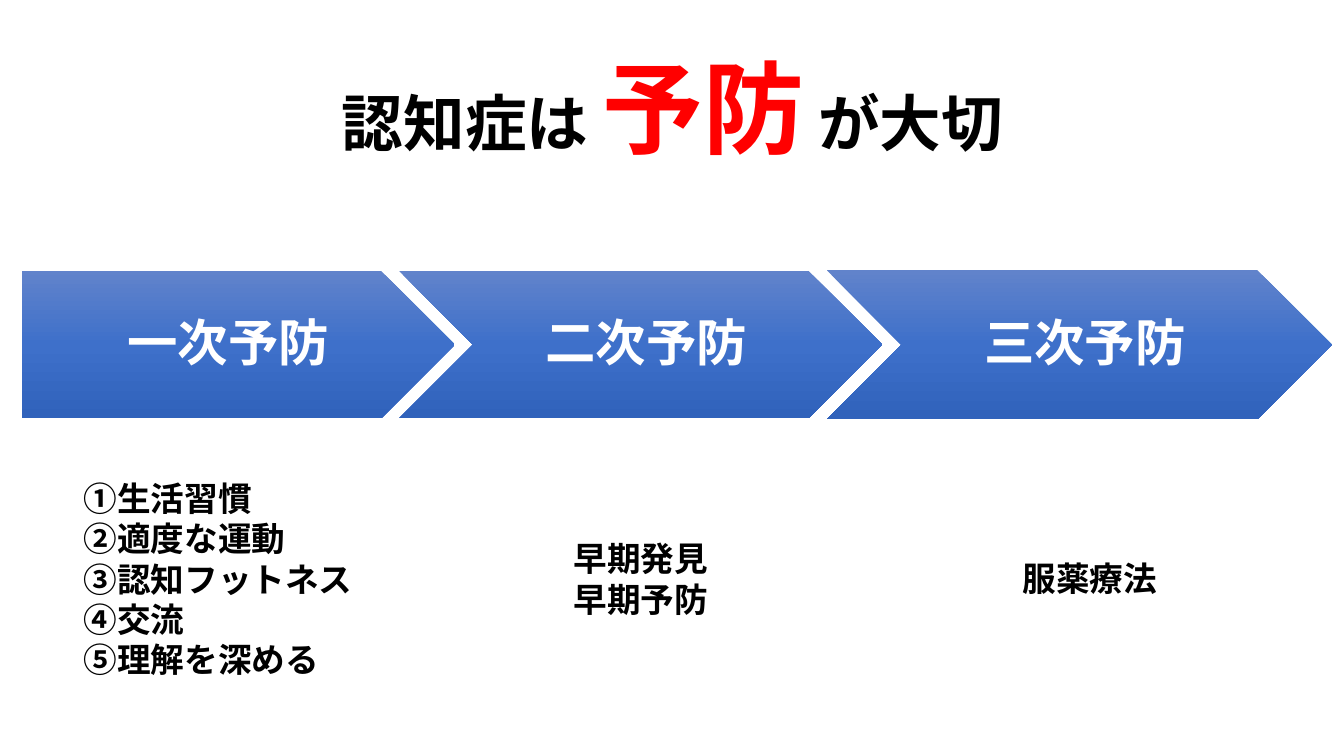
"""Build a slide on the three stages of dementia prevention."""
from copy import deepcopy
from dataclasses import dataclass

from lxml import etree
from pptx import Presentation
from pptx.dml.color import RGBColor
from pptx.enum.lang import MSO_LANGUAGE_ID
from pptx.enum.shapes import MSO_SHAPE
from pptx.enum.text import MSO_ANCHOR, MSO_AUTO_SIZE, PP_ALIGN
from pptx.oxml.ns import qn
from pptx.util import Inches, Pt

PENTAGON = MSO_SHAPE.PENTAGON
CHEVRON = MSO_SHAPE.CHEVRON
MIDDLE = MSO_ANCHOR.MIDDLE
TOP = MSO_ANCHOR.TOP
NO_AUTOFIT = MSO_AUTO_SIZE.NONE
GROW = MSO_AUTO_SIZE.SHAPE_TO_FIT_TEXT
CENTER = PP_ALIGN.CENTER
LEFT = PP_ALIGN.LEFT
JAPANESE = MSO_LANGUAGE_ID.JAPANESE

FONT = "Cabin"
BLACK, RED, WHITE = "000000", "FF0000", "FFFFFF"
ARROW_GRADIENT = ((0, "6183CB"), (0.5, "3E70CA"), (1, "3062BB"))


@dataclass(frozen=True)
class Box:
    left: float
    top: float
    width: float
    height: float


@dataclass(frozen=True)
class Stage:
    label: str
    outline: MSO_SHAPE
    arrow: Box
    left_inset: float
    measures: tuple[str, ...]
    measures_box: Box
    alignment: PP_ALIGN = CENTER


TITLE_BOX = Box(0.92, 0.4, 11.5, 1.45)
TITLE_PARTS = (("認知症は ", 44, BLACK), ("予防", 72, RED), (" が大切", 44, BLACK))
STAGES = (
    Stage("一次予防", PENTAGON, Box(0.22, 2.69, 4.29, 1.46), 0.21,
          ("①生活習慣", "②適度な運動", "③認知フットネス", "④交流", "⑤理解を深める"),
          Box(0.73, 4.69, 3.22, 2.12), LEFT),
    Stage("二次予防", CHEVRON, Box(3.96, 2.69, 4.79, 1.46), 0.16,
          ("早期発見", "早期予防"), Box(5.55, 5.29, 1.61, 0.91)),
    Stage("三次予防", CHEVRON, Box(8.2, 2.68, 5.01, 1.48), 0.16,
          ("服薬療法",), Box(9.6, 5.49, 2.42, 0.5)),
)


def color(hex_code: str) -> RGBColor:
    return RGBColor.from_string(hex_code)


def lengths(box: Box) -> tuple[int, ...]:
    return tuple(Inches(v) for v in (box.left, box.top, box.width, box.height))


def place(shape, box: Box) -> None:
    shape.left, shape.top, shape.width, shape.height = lengths(box)


def format_run(run, size: int, hex_code: str) -> None:
    font = run.font
    font.name, font.size, font.bold = FONT, Pt(size), True
    font.language_id = JAPANESE
    font.color.rgb = color(hex_code)


def fill_title(title) -> None:
    place(title, TITLE_BOX)
    frame = title.text_frame
    frame.vertical_anchor, frame.auto_size = MIDDLE, NO_AUTOFIT
    paragraph = frame.paragraphs[0]
    paragraph.alignment, paragraph.line_spacing = CENTER, 0.9
    for text, size, hex_code in TITLE_PARTS:
        run = paragraph.add_run()
        run.text = text
        format_run(run, size, hex_code)


def fill_gradient(shape) -> None:
    shape.fill.gradient()
    stop_list = shape.fill._xPr.find(qn("a:gradFill")).find(qn("a:gsLst"))
    stop_list.append(deepcopy(stop_list[-1]))
    for stop, (position, hex_code) in zip(shape.fill.gradient_stops, ARROW_GRADIENT):
        stop.position = position
        stop.color.rgb = color(hex_code)
    shape.fill.gradient_angle = 270


def draw_arrow(slide, stage: Stage) -> None:
    arrow = slide.shapes.add_shape(stage.outline, *lengths(stage.arrow))
    arrow.shadow.inherit = False
    arrow.line.fill.background()
    fill_gradient(arrow)
    frame = arrow.text_frame
    frame.text = stage.label
    frame.vertical_anchor = MIDDLE
    frame.margin_left, frame.margin_right = Inches(stage.left_inset), Inches(0.05)
    frame.margin_top = frame.margin_bottom = Inches(0.1)
    label = frame.paragraphs[0]
    label.alignment, label.line_spacing = CENTER, 0.9
    format_run(label.runs[0], 36, WHITE)


def fill_measures(holder, stage: Stage) -> None:
    place(holder, stage.measures_box)
    frame = holder.text_frame
    frame.text = "\n".join(stage.measures)
    frame.word_wrap, frame.auto_size, frame.vertical_anchor = True, GROW, TOP
    for paragraph in frame.paragraphs:
        paragraph.alignment = stage.alignment
        paragraph.space_before = Pt(0)
        properties = paragraph._p.get_or_add_pPr()
        properties.set("marL", "0")
        properties.set("indent", "0")
        etree.SubElement(properties, qn("a:buNone"))
        format_run(paragraph.runs[0], 24, BLACK)


def main() -> None:
    deck = Presentation()
    deck.slide_width, deck.slide_height = Inches(13.33), Inches(7.5)
    slide = deck.slides.add_slide(deck.slide_layouts[1])
    fill_title(slide.shapes.title)
    for stage in STAGES:
        draw_arrow(slide, stage)
    primary, *later = STAGES
    fill_measures(slide.placeholders[1], primary)
    for stage in later:
        fill_measures(slide.shapes.add_textbox(*lengths(stage.measures_box)), stage)
    deck.save("out.pptx")


if __name__ == "__main__":
    main()
